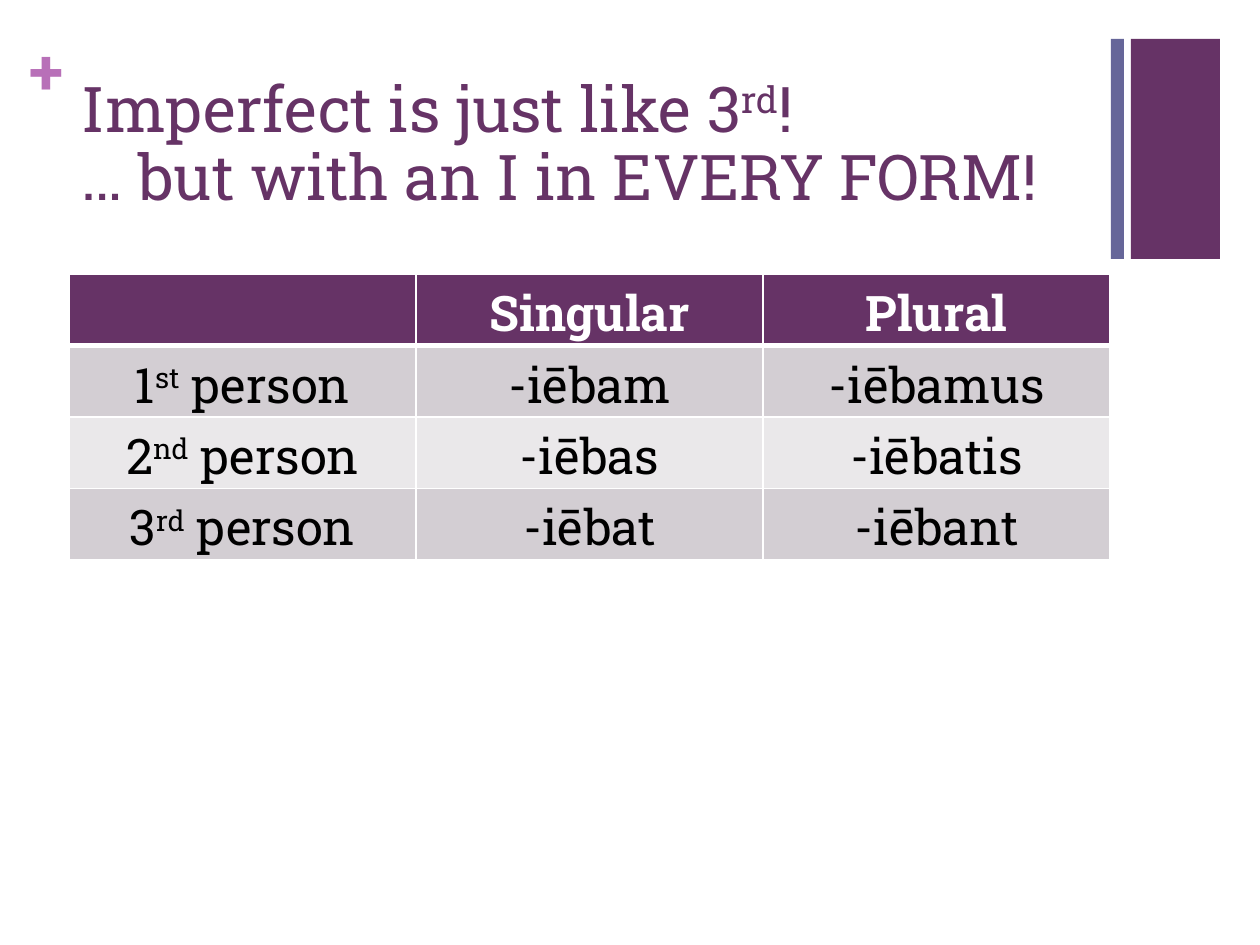
from dataclasses import dataclass

from lxml import etree
from pptx import Presentation
from pptx.dml.color import RGBColor
from pptx.enum.shapes import MSO_SHAPE
from pptx.enum.text import MSO_ANCHOR, MSO_AUTO_SIZE, PP_ALIGN
from pptx.oxml.ns import qn
from pptx.util import Emu, Pt

RECTANGLE = MSO_SHAPE.RECTANGLE
TOP = MSO_ANCHOR.TOP
NO_AUTOFIT = MSO_AUTO_SIZE.NONE
LEFT, CENTER = PP_ALIGN.LEFT, PP_ALIGN.CENTER
TITLE_ONLY = 5
PX_PER_INCH = 126


@dataclass(frozen=True)
class Theme:
    font: str = "Roboto Slab"
    plum: str = "663366"
    slate: str = "666699"
    orchid: str = "B870B8"
    white: str = "FFFFFF"
    black: str = "000000"
    bands: tuple = ("D3CED3", "EAE8EA")
    title_size: int = 36
    table_size: int = 28


THEME = Theme()
HEADINGS = ("", "Singular", "Plural")
ENDINGS = (
    (("1", "st"), "-iēbam", "-iēbamus"),
    (("2", "nd"), "-iēbas", "-iēbatis"),
    (("3", "rd"), "-iēbat", "-iēbant"),
)


def px(length):
    return Emu(round(length * 914400 / PX_PER_INCH))


def place(shape, left, top, width, height):
    shape.left, shape.top = px(left), px(top)
    shape.width, shape.height = px(width), px(height)


def style_paragraph(paragraph, size, color, bold=False, align=LEFT):
    font = paragraph.font
    font.name, font.size, font.bold = THEME.font, Pt(size), bold
    font.color.rgb = RGBColor.from_string(color)
    paragraph.alignment = align


def add_ordinal(paragraph, number, suffix, rest):
    """Add a number with a raised suffix, then the words that follow it."""
    for part in (number, suffix, rest):
        run = paragraph.add_run()
        run.text = part
        if part == suffix:
            run._r.get_or_add_rPr().set("baseline", "30000")


def add_bar(slide, left, width, color):
    bar = slide.shapes.add_shape(RECTANGLE, px(left), px(39), px(width), px(220))
    bar.shadow.inherit = False
    bar.fill.solid()
    bar.fill.fore_color.rgb = RGBColor.from_string(color)
    bar.line.fill.background()


def add_plus(slide):
    frame = slide.shapes.add_textbox(px(30), px(32), px(37), px(77)).text_frame
    frame.margin_left = frame.margin_right = 0
    frame.margin_top = frame.margin_bottom = 0
    frame.word_wrap = True
    paragraph = frame.paragraphs[0]
    paragraph.text = "+"
    style_paragraph(paragraph, THEME.title_size, THEME.orchid, bold=True)


def fill_title(slide):
    title = slide.shapes.title
    place(title, 69, 67, 1041, 154)
    frame = title.text_frame
    frame.auto_size = NO_AUTOFIT
    frame.vertical_anchor = TOP
    frame.margin_top, frame.margin_bottom = px(11), 0
    paragraph = frame.paragraphs[0]
    paragraph.line_spacing = 0.9
    add_ordinal(paragraph, "Imperfect is just like 3", "rd", "!")
    paragraph.add_line_break()
    paragraph.add_run().text = "… but with an I in EVERY FORM!"
    style_paragraph(paragraph, THEME.title_size, THEME.plum)


def set_borders(cell, header):
    """Draw white cell edges, with a heavier rule below the header."""
    properties = cell._tc.get_or_add_tcPr()
    edges = {"lnL": 1, "lnR": 1, "lnT": 1, "lnB": 3 if header else 1}
    for position, (edge, width) in enumerate(edges.items()):
        line = etree.Element(qn(f"a:{edge}"), w=str(Pt(width)))
        fill = etree.SubElement(line, qn("a:solidFill"))
        etree.SubElement(fill, qn("a:srgbClr"), val=THEME.white)
        properties.insert(position, line)


def fill_cell(cell, content, fill, color, header=False):
    cell.fill.solid()
    cell.fill.fore_color.rgb = RGBColor.from_string(fill)
    set_borders(cell, header)
    paragraph = cell.text_frame.paragraphs[0]
    if isinstance(content, tuple):
        add_ordinal(paragraph, *content, " person")
    elif content:
        paragraph.text = content
    style_paragraph(paragraph, THEME.table_size, color, header, CENTER)


def add_endings_table(slide):
    row_count, column_count = len(ENDINGS) + 1, len(HEADINGS)
    table = slide.shapes.add_table(
        row_count, column_count, px(69), px(274), px(1041), px(286)
    ).table
    for column, heading in enumerate(HEADINGS):
        fill_cell(table.cell(0, column), heading, THEME.plum, THEME.white, header=True)
    for row, contents in enumerate(ENDINGS, start=1):
        band = THEME.bands[(row - 1) % 2]
        for column, content in enumerate(contents):
            fill_cell(table.cell(row, column), content, band, THEME.black)


def main():
    presentation = Presentation()
    presentation.slide_width, presentation.slide_height = px(1260), px(945)
    slide = presentation.slides.add_slide(presentation.slide_layouts[TITLE_ONLY])
    add_bar(slide, 1131, 89, THEME.plum)
    add_plus(slide)
    add_bar(slide, 1111, 13, THEME.slate)
    fill_title(slide)
    add_endings_table(slide)
    presentation.save("out.pptx")


if __name__ == "__main__":
    main()
